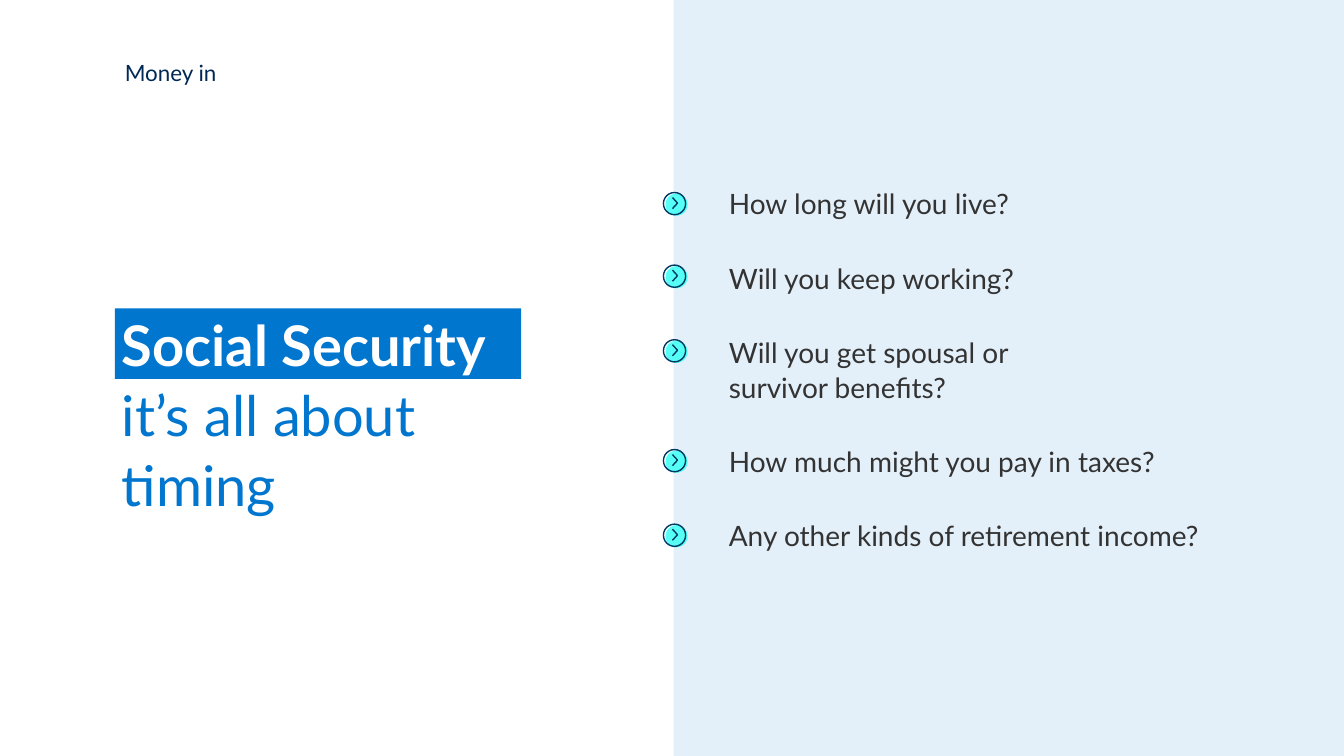
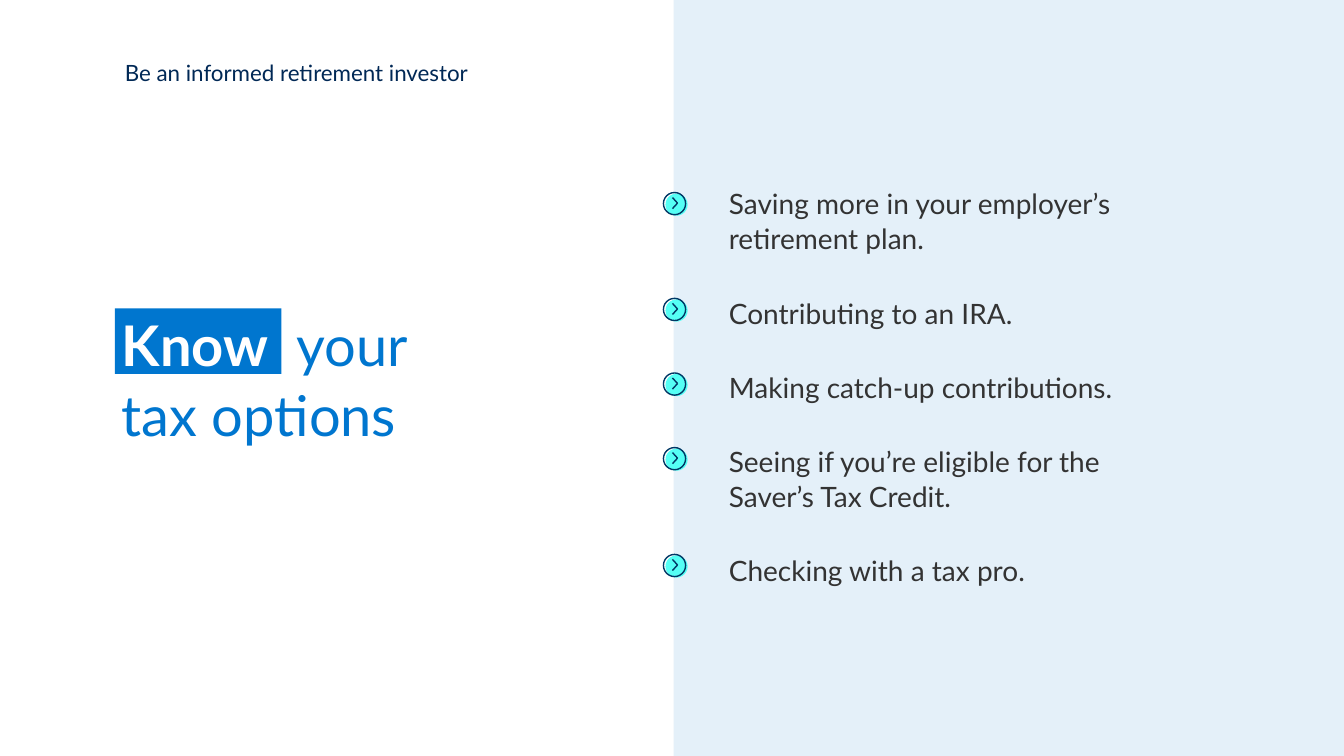
"""Build two retirement slides, each with a title at left and a list of points at right."""
from lxml import etree
from pptx import Presentation
from pptx.dml.color import RGBColor
from pptx.enum import shapes
from pptx.oxml import ns
from pptx.util import Inches, Pt

BLUE = RGBColor(0x00, 0x76, 0xCF)
PALE = RGBColor(0xE4, 0xF0, 0xF9)
NAVY = RGBColor(0x00, 0x28, 0x55)
RING = RGBColor(0x00, 0x38, 0x65)
AQUA = RGBColor(0x55, 0xFF, 0xF5)
GREY = RGBColor(0x33, 0x33, 0x33)
WHITE = RGBColor(0xFF, 0xFF, 0xFF)
RECT, OVAL = shapes.MSO_SHAPE.RECTANGLE, shapes.MSO_SHAPE.OVAL

SLIDES = [
    {
        "section": "Money in",
        "title": [("Social Security", ""), ("", "it’s all about timing")],
        "highlight": (4.03, 0.7),
        "title_width": 4.63,
        "points_width": 5.11,
        "points": [
            (1.91, "How long will you live?"),
            (2.63, "Will you keep working?"),
            (3.37, "Will you get spousal or\vsurvivor benefits?"),
            (4.46, "How much might you pay in taxes?"),
            (5.2, "Any other kinds of retirement income?"),
        ],
    },
    {
        "section": "Be an informed retirement investor",
        "title": [("Know", "\tyour tax options")],
        "highlight": (1.65, 0.65),
        "title_width": 3.75,
        "points_width": 4.28,
        "points": [
            (1.91, "Saving more in your employer’s retirement plan."),
            (2.96, "Contributing to an IRA."),
            (3.7, "Making catch-up contributions."),
            (4.44, "Seeing if you’re eligible for the Saver’s Tax Credit."),
            (5.5, "Checking with a tax pro."),
        ],
    },
]


def add_shape(parent, kind, left, top, width, height, fill=None):
    shape = parent.add_shape(kind, Inches(left), Inches(top), Inches(width), Inches(height))
    shape.shadow.inherit = False
    if fill is None:
        shape.fill.background()
        shape.line.color.rgb = RING
        shape.line.width = Pt(1)
    else:
        shape.fill.solid()
        shape.fill.fore_color.rgb = fill
        shape.line.fill.background()


def add_text(slide, left, top, width, height, lines, size, line_height=None):
    box = slide.shapes.add_textbox(Inches(left), Inches(top), Inches(width), Inches(height))
    box.text_frame.word_wrap = True
    box.text_frame.text = "\n".join(lines)
    for paragraph in box.text_frame.paragraphs:
        paragraph.font.size = Pt(size)
        if line_height:
            paragraph.line_spacing = Pt(line_height)
    return box.text_frame.paragraphs


prs = Presentation()
prs.slide_width, prs.slide_height = Inches(13.33), Inches(7.5)

for content in SLIDES:
    slide = prs.slides.add_slide(prs.slide_layouts[6])
    add_shape(slide.shapes, RECT, 1.14, 3.06, *content["highlight"], BLUE)
    add_shape(slide.shapes, RECT, 6.68, 0, 6.65, 7.5, PALE)

    section = add_text(slide, 1.14, 0.54, 4.76, 0.89, [content["section"]], 16)
    section[0].runs[0].font.name = "Lato"
    section[0].runs[0].font.color.rgb = NAVY

    blanks = [""] * len(content["title"])
    title = add_text(slide, 1.11, 3, content["title_width"], 0.94, blanks, 40, 50)
    for paragraph, (strong, plain) in zip(title, content["title"]):
        tabs = etree.SubElement(paragraph.line_spacing and paragraph._p.pPr, ns.qn("a:tabLst"))
        etree.SubElement(tabs, ns.qn("a:tab"), pos=str(Inches(1.73)), algn="l")
        paragraph._p.pPr.insert_element_before(tabs, "a:defRPr")
        for words, color, bold in ((strong, WHITE, True), (plain, BLUE, False)):
            if words:
                run = paragraph.add_run()
                run.text = words
                run.font.name, run.font.size, run.font.bold = "Lato", Pt(40), bold
                run.font.color.rgb = color

    wording = [words for _, words in content["points"]]
    points = add_text(slide, 7.08, 1.79, content["points_width"], 3.25, wording, 20, 25)
    for paragraph in points:
        paragraph.space_after = Pt(28)
        paragraph._p.pPr.set("marL", str(Inches(0.05)))
        for run in paragraph.runs:
            run.font.name, run.font.size = "Lato", Pt(20)
            run.font.color.rgb = GREY
    for run in section[0].runs:
        run.font.size = Pt(16)

    for top, _ in content["points"]:
        bullet = slide.shapes.add_group_shape().shapes
        add_shape(bullet, OVAL, 6.6, top + 0.01, 0.22, 0.22, AQUA)
        for end in (0.05, 0.16):
            stroke = bullet.add_connector(
                shapes.MSO_CONNECTOR.STRAIGHT,
                Inches(6.67), Inches(top + end), Inches(6.72), Inches(top + 0.105))
            stroke.line.color.rgb = RING
            stroke.line.width = Pt(1)
            etree.SubElement(stroke._element.spPr, ns.qn("a:effectLst"))
        add_shape(bullet, OVAL, 6.58, top, 0.22, 0.22)

prs.save("out.pptx")
